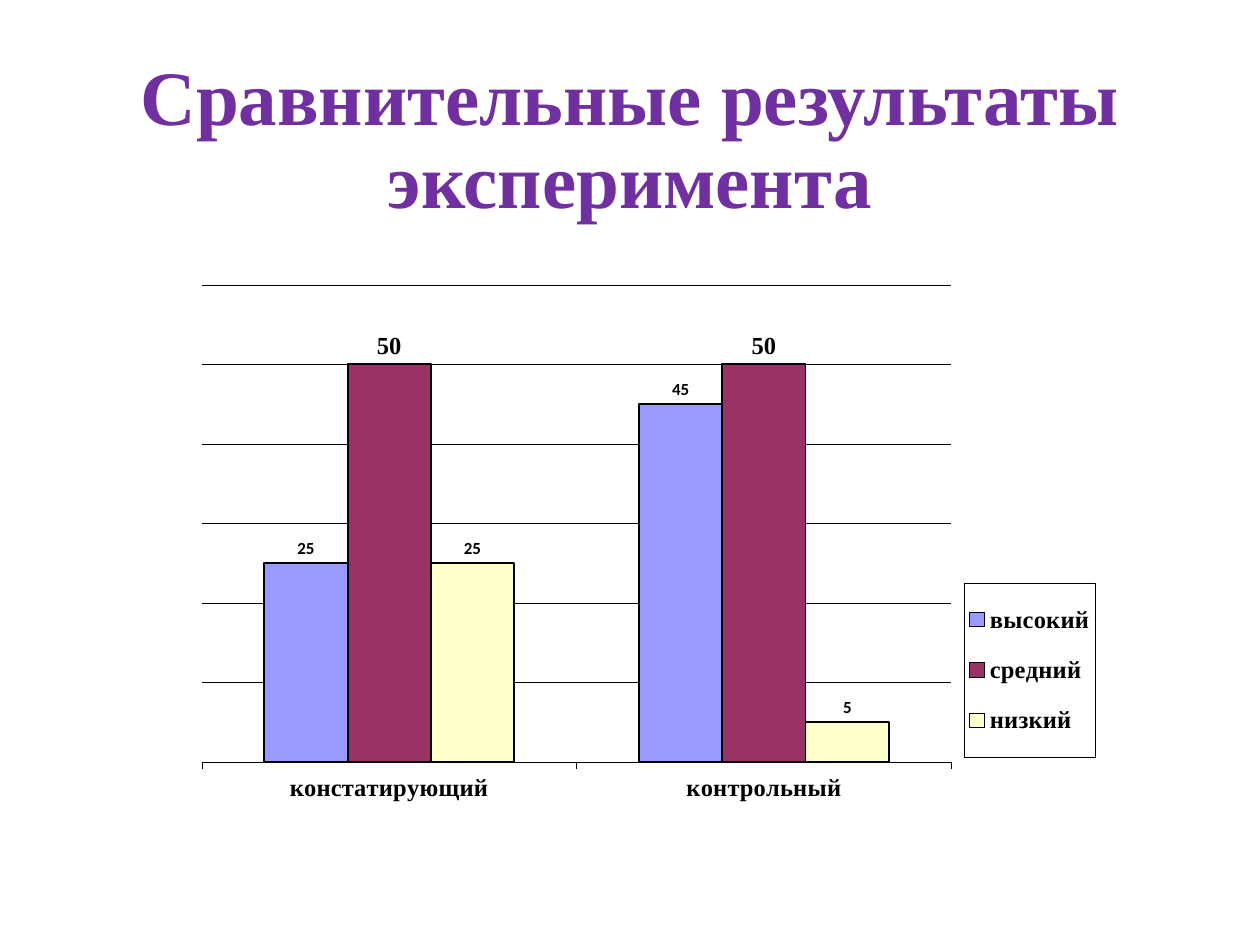
from pptx import Presentation
from pptx.chart.data import CategoryChartData as ChartData
from pptx.dml.color import RGBColor
from pptx.enum.chart import (
    XL_CHART_TYPE as ChartType,
    XL_LABEL_POSITION as LabelPos,
    XL_LEGEND_POSITION as LegendPos,
    XL_TICK_LABEL_POSITION as TickLabel,
    XL_TICK_MARK as TickMark,
)
from pptx.enum.text import MSO_ANCHOR as Anchor, PP_ALIGN as Align
from pptx.oxml import parse_xml
from pptx.oxml.ns import nsdecls, qn
from pptx.util import Cm, Pt

PURPLE = RGBColor(0x70, 0x30, 0xA0)
BLACK = RGBColor(0x00, 0x00, 0x00)
BLUE = RGBColor(0x99, 0x99, 0xFF)
PLUM = RGBColor(0x99, 0x33, 0x66)
CREAM = RGBColor(0xFF, 0xFF, 0xCC)

STAGES = ["констатирующий", "контрольный"]
LEVELS = [
    ("высокий", (25, 45), BLUE),
    ("средний", (50, 50), PLUM),
    ("низкий", (25, 5), CREAM),
]


class SlideBuilder:
    serif = "Times New Roman"
    sans = "Calibri"
    hairline = Pt(0.25)

    def __init__(self, prs):
        self.slide = prs.slides.add_slide(prs.slide_layouts[6])

    def font(self, font, size, name, color=BLACK):
        font.size = Pt(size)
        font.name = name
        font.bold = True
        font.color.rgb = color

    def line(self, line, width):
        line.color.rgb = BLACK
        line.width = width

    def layout(self, x, y, w, h, inner=False):
        target = '<c:layoutTarget val="inner"/>' if inner else ""
        return parse_xml(
            f'<c:layout {nsdecls("c")}><c:manualLayout>{target}'
            '<c:xMode val="edge"/><c:yMode val="edge"/>'
            f'<c:x val="{x}"/><c:y val="{y}"/><c:w val="{w}"/><c:h val="{h}"/>'
            "</c:manualLayout></c:layout>"
        )

    def place(self, parent, index, layout):
        for old in parent.findall(qn("c:layout")):
            parent.remove(old)
        parent.insert(index, layout)

    def title(self, text, x, y, w, h):
        sp = self.slide.shapes.add_textbox(x, y, w, h)
        tf = sp.text_frame
        tf.word_wrap = True
        tf.vertical_anchor = Anchor.MIDDLE
        p = tf.paragraphs[0]
        p.alignment = Align.CENTER
        p.line_spacing = 0.9
        r = p.add_run()
        r.text = text
        self.font(r.font, 44, self.serif, PURPLE)

    def column_chart(self, categories, series, x, y, w, h):
        data = ChartData()
        data.categories = categories
        for name, values, _ in series:
            data.add_series(name, values)
        chart = self.slide.shapes.add_chart(
            ChartType.COLUMN_CLUSTERED, x, y, w, h, data
        ).chart
        chart.has_title = False
        self.font(chart.font, 9.7, self.sans)
        plot = chart.plots[0]
        plot.gap_width = 150
        plot.overlap = 0
        plot.vary_by_categories = False
        for ser, (name, _, color) in zip(plot.series, series):
            self.series(ser, color, name == "средний")
        self.axes(chart)
        self.legend(chart)
        plot_area = chart._chartSpace.chart.plotArea
        self.place(plot_area, 0, self.layout(0.058, 0.053, 0.69, 0.795, True))

    def series(self, ser, color, large):
        ser.format.fill.solid()
        ser.format.fill.fore_color.rgb = color
        self.line(ser.format.line, Pt(1))
        labels = ser.data_labels
        labels.show_value = True
        labels.position = LabelPos.OUTSIDE_END
        self.font(labels.font, *((14, self.serif) if large else (9.7, self.sans)))

    def axes(self, chart):
        cat = chart.category_axis
        cat.tick_label_position = TickLabel.LOW
        cat.major_tick_mark = TickMark.OUTSIDE
        cat.has_major_gridlines = False
        self.font(cat.tick_labels.font, 14, self.serif)
        self.line(cat.format.line, self.hairline)
        val = chart.value_axis
        val.minimum_scale, val.maximum_scale, val.major_unit = 0, 60, 10
        val.has_major_gridlines = True
        self.line(val.major_gridlines.format.line, self.hairline)
        val.visible = False

    def legend(self, chart):
        chart.has_legend = True
        legend = chart.legend
        legend.position = LegendPos.RIGHT
        legend.include_in_layout = False
        self.font(legend.font, 14, self.serif)
        el = legend._element
        self.place(el, 1, self.layout(0.76, 0.55, 0.12, 0.29))
        el.find(qn("c:overlay")).addnext(parse_xml(
            f'<c:spPr {nsdecls("c", "a")}>'
            '<a:solidFill><a:srgbClr val="FFFFFF"/></a:solidFill>'
            f'<a:ln w="{self.hairline}"><a:solidFill><a:srgbClr val="{BLACK}"/>'
            "</a:solidFill></a:ln></c:spPr>"
        ))


def main():
    prs = Presentation()
    prs.slide_width, prs.slide_height = Cm(25.4), Cm(19.05)
    builder = SlideBuilder(prs)
    builder.title(
        "Сравнительные результаты эксперимента",
        Cm(1.75), Cm(1.02), Cm(21.9), Cm(3.68),
    )
    builder.column_chart(STAGES, LEVELS, Cm(2.8), Cm(5.1), Cm(21.9), Cm(12.1))
    prs.save("out.pptx")


if __name__ == "__main__":
    main()
